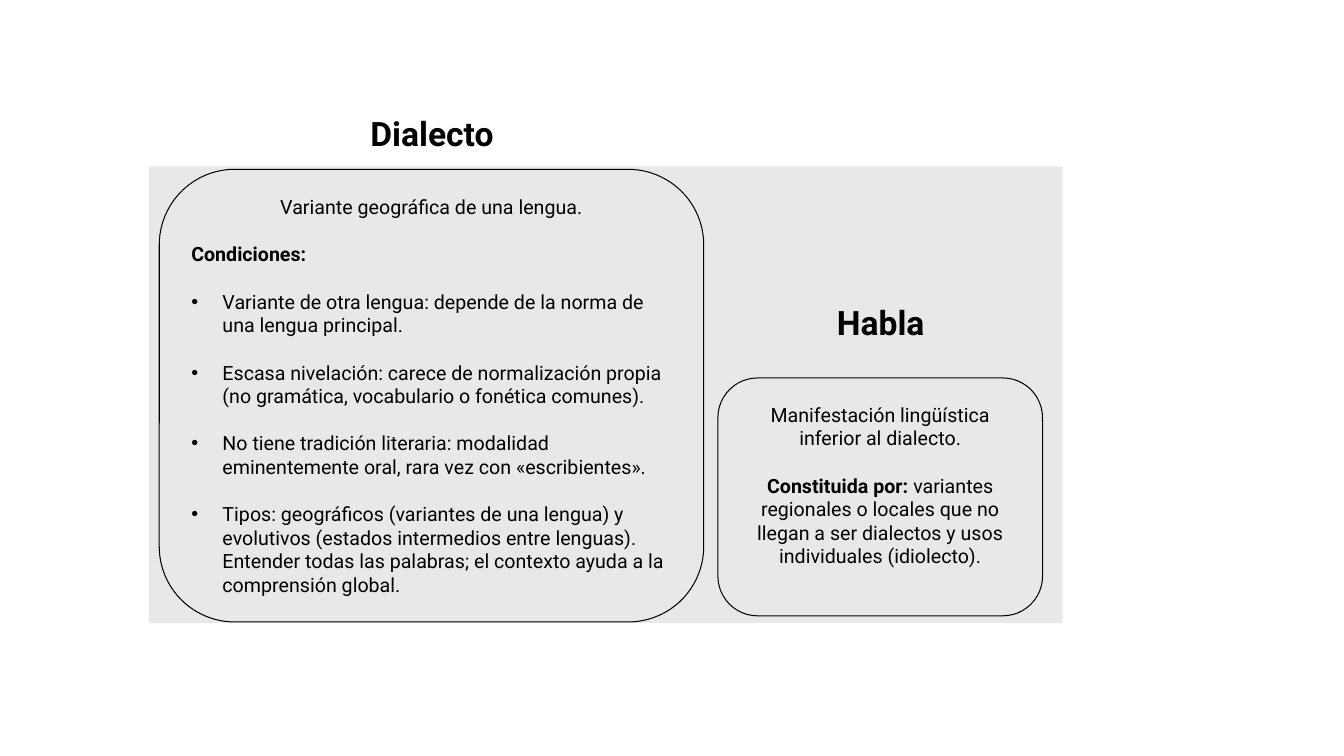
from lxml.etree import SubElement
from pptx import Presentation
from pptx.dml.color import RGBColor
from pptx.enum.shapes import MSO_SHAPE
from pptx.enum.text import MSO_ANCHOR, MSO_AUTO_SIZE, PP_ALIGN
from pptx.oxml.ns import qn
from pptx.util import Pt

PX = 9144
C = {"ink": "000000", "panel": "E5E5E5"}
CONDITIONS = [
    "Variante de otra lengua: depende de la norma de una lengua principal.",
    "Escasa nivelación: carece de normalización propia (no gramática, vocabulario o fonética comunes).",
    "No tiene tradición literaria: modalidad eminentemente oral, rara vez con «escribientes».",
    "Tipos: geográficos (variantes de una lengua) y evolutivos (estados intermedios entre lenguas). "
    "Entender todas las palabras; el contexto ayuda a la comprensión global.",
]
DIALECT = [(PP_ALIGN.CENTER, False, [("Variante geográfica de una lengua.", False)]),
           (PP_ALIGN.LEFT, False, [("Condiciones:", True)])]
DIALECT += [(PP_ALIGN.LEFT, True, [(text, False)]) for text in CONDITIONS]
SPEECH = [
    (PP_ALIGN.CENTER, False, [("Manifestación lingüística inferior al dialecto.", False)]),
    (PP_ALIGN.CENTER, False, [
        ("Constituida por: ", True),
        ("variantes regionales o locales que no llegan a ser dialectos y usos individuales (idiolecto).", False),
    ]),
]


def px(*values):
    return [v * PX for v in values]


def add_run(p, text, size, bold):
    r = p.add_run()
    r.text = text
    r.font.name = "Roboto"
    r.font.size = Pt(size)
    r.font.bold = bold
    r.font.color.rgb = RGBColor.from_string(C["ink"])


prs = Presentation()
prs.slide_width, prs.slide_height = px(1333, 750)
s = prs.slides.add_slide(prs.slide_layouts[5])

panel = s.shapes.add_shape(MSO_SHAPE.RECTANGLE, *px(148, 165, 906, 453))
panel.shadow.inherit = False
panel.fill.solid()
panel.fill.fore_color.rgb = RGBColor.from_string(C["panel"])
color = panel.fill._xPr.find(qn("a:solidFill"))[0]
SubElement(color, qn("a:alpha"), val="85000")
panel.line.fill.background()

for box, bottom, paragraphs in [((158, 168, 540, 449), 5, DIALECT),
                                ((712, 375, 322, 236), 28, SPEECH)]:
    sp = s.shapes.add_shape(MSO_SHAPE.ROUNDED_RECTANGLE, *px(*box))
    sp.shadow.inherit = False
    sp.fill.background()
    sp.line.color.rgb = RGBColor.from_string(C["ink"])
    sp.line.width = Pt(0.75)
    tf = sp.text_frame
    tf.word_wrap = True
    tf.vertical_anchor = MSO_ANCHOR.MIDDLE
    tf.margin_bottom = bottom * PX
    for i, (align, bulleted, runs) in enumerate(paragraphs):
        p = tf.add_paragraph() if i else tf.paragraphs[0]
        p.alignment = align
        if i:
            p.space_before = Pt(17)
        if bulleted:
            pPr = p._p.get_or_add_pPr()
            pPr.set("marL", str(31 * PX))
            pPr.set("indent", str(-31 * PX))
            SubElement(pPr, qn("a:buFont"), typeface="Arial")
            SubElement(pPr, qn("a:buChar"), char="•")
        for text, bold in runs:
            add_run(p, text, 14, bold)

title = s.shapes.title
title.left, title.top, title.width, title.height = px(336, 107, 185, 50)
speech_heading = s.shapes.add_textbox(*px(781, 295, 185, 50))
for sp, text in [(title, "Dialecto"), (speech_heading, "Habla")]:
    tf = sp.text_frame
    tf.word_wrap = True
    tf.auto_size = MSO_AUTO_SIZE.NONE
    tf.vertical_anchor = MSO_ANCHOR.TOP
    p = tf.paragraphs[0]
    p.alignment = PP_ALIGN.CENTER
    add_run(p, text, 24, True)

prs.save("out.pptx")
